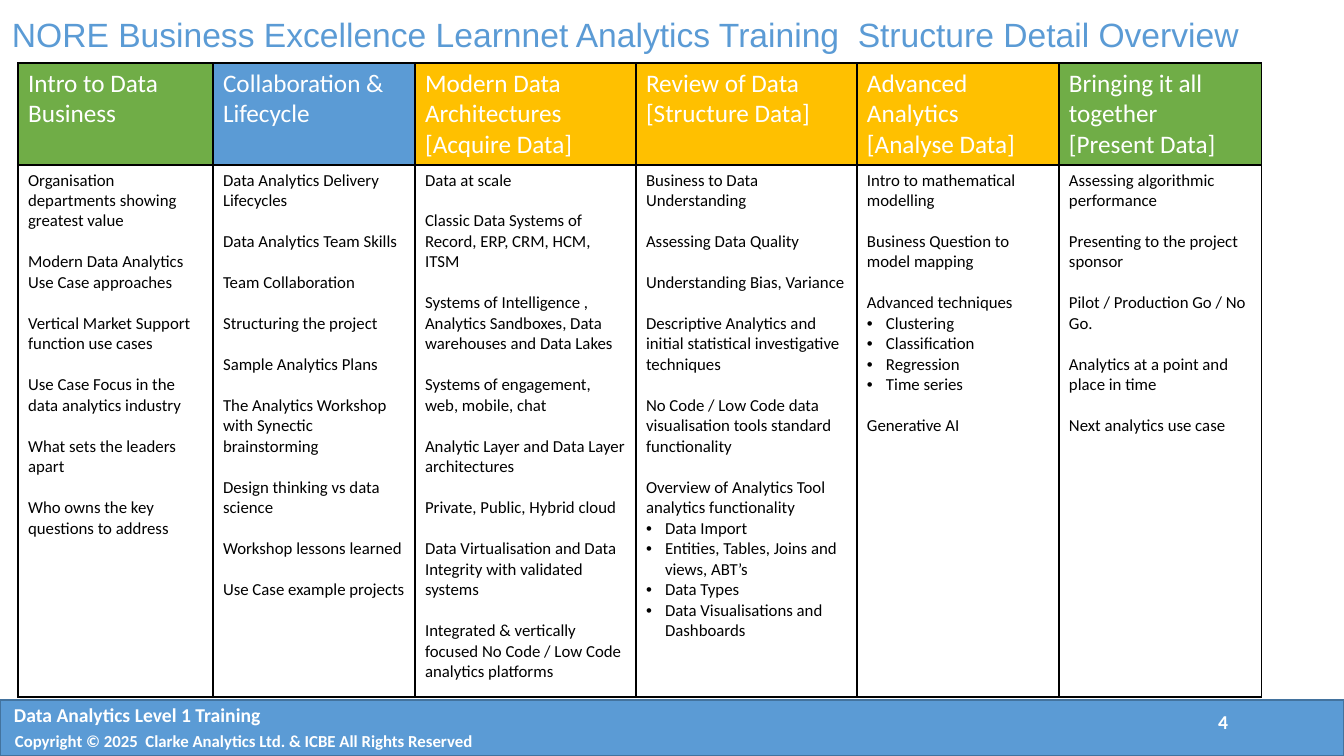
from lxml.etree import SubElement
from pptx import Presentation
from pptx.dml.color import RGBColor as RGB
from pptx.enum.shapes import MSO_SHAPE as SHAPE
from pptx.enum.text import MSO_ANCHOR as ANCHOR, PP_ALIGN as ALIGN
from pptx.oxml.ns import qn
from pptx.util import Pt

PX = 914400 / 100.8
COLORS = {"blue": "5B9BD5", "navy": "43739E", "green": "70AD47",
          "amber": "FFC000", "white": "FFFFFF", "black": "000000"}
LINE = 14.65  # one line of 12 pt body text, in points
BULLET = "• "

# Width, colour, heading and topics of each module
MODULES = [
    (195, "green", ["Intro to Data Business"], [
        "Organisation departments showing greatest value",
        "Modern Data Analytics Use Case approaches",
        "Vertical Market Support function use cases",
        "Use Case Focus in the data analytics industry",
        "What sets the leaders apart",
        "Who owns the key questions to address"]),
    (202, "blue", ["Collaboration & Lifecycle"], [
        "Data Analytics Delivery Lifecycles",
        "Data Analytics Team Skills",
        "Team Collaboration",
        "Structuring the project",
        "Sample Analytics Plans",
        "The Analytics Workshop with Synectic brainstorming",
        "Design thinking vs data science",
        "Workshop lessons learned",
        "Use Case example projects"]),
    (221, "amber", ["Modern Data Architectures", "[Acquire Data]"], [
        "Data at scale",
        "Classic Data Systems of Record, ERP, CRM, HCM, ITSM",
        "Systems of Intelligence , Analytics Sandboxes, Data warehouses and Data Lakes",
        "Systems of engagement, web, mobile, chat",
        "Analytic Layer and Data Layer architectures",
        "Private, Public, Hybrid cloud",
        "Data Virtualisation and Data Integrity with validated systems",
        "Integrated & vertically focused No Code / Low Code analytics platforms"]),
    (221, "amber", ["Review of Data", "[Structure Data]"], [
        "Business to Data Understanding",
        "Assessing Data Quality",
        "Understanding Bias, Variance",
        "Descriptive Analytics and initial statistical investigative techniques",
        "No Code / Low Code data visualisation tools standard functionality",
        "Overview of Analytics Tool analytics functionality",
        "• Data Import",
        "• Entities, Tables, Joins and views, ABT’s",
        "• Data Types",
        "• Data Visualisations and Dashboards"]),
    (202, "amber", ["Advanced Analytics", "[Analyse Data]"], [
        "Intro to mathematical modelling",
        "Business Question to model mapping",
        "Advanced techniques",
        "• Clustering",
        "• Classification",
        "• Regression",
        "• Time series",
        "Generative AI"]),
    (203, "green", ["Bringing it all together", "[Present Data]"], [
        "Assessing algorithmic performance",
        "Presenting to the project sponsor",
        "Pilot / Production Go / No Go.",
        "Analytics at a point and place in time",
        "Next analytics use case"]),
]


def px(n):
    return round(n * PX)


def rgb(name):
    return RGB.from_string(COLORS[name])


def write(tf, lines, size, color, font="Calibri", bold=False, gap=0):
    """Fill a text frame, leaving a gap before each line that is not a bullet."""
    for i, line in enumerate(lines):
        p = tf.paragraphs[0] if i == 0 else tf.add_paragraph()
        if line.startswith(BULLET):
            pPr = p._p.get_or_add_pPr()
            pPr.set("marL", str(px(19)))
            pPr.set("indent", str(px(-19)))
            SubElement(pPr, qn("a:buFont"), typeface="Arial")
            SubElement(pPr, qn("a:buChar"), char=BULLET.strip())
        elif i and gap:
            p.space_before = Pt(gap)
        r = p.add_run()
        r.text = line.removeprefix(BULLET)
        for key, value in {"size": Pt(size), "name": font, "bold": bold}.items():
            setattr(r.font, key, value)
        r.font.color.rgb = rgb(color)


def add_text(s, box, text, size, color, align=ALIGN.LEFT, **style):
    tf = s.shapes.add_textbox(*map(px, box)).text_frame
    tf.word_wrap = True
    write(tf, [text], size, color, **style)
    tf.paragraphs[0].alignment = align
    return tf


def add_title(s, box):
    tf = add_text(s, box, "NORE Business Excellence Learnnet Analytics Training"
                  "  Structure Detail Overview", 24, "blue", font="Arial")
    tf.vertical_anchor = ANCHOR.MIDDLE
    for side in ("left", "right", "top", "bottom"):
        setattr(tf, f"margin_{side}", 0)
    tf.paragraphs[0].line_spacing = 0.9


def style_cell(cell, fill):
    """Draw the four borders, then the fill."""
    tcPr = cell._tc.get_or_add_tcPr()
    for side in "LRTB":
        ln = SubElement(tcPr, qn(f"a:ln{side}"), w=str(Pt(1)))
        SubElement(SubElement(ln, qn("a:solidFill")), qn("a:srgbClr"),
                   val=COLORS["black"])
    cell.fill.solid()
    cell.fill.fore_color.rgb = rgb(fill)


def add_modules(s, box, header_h):
    table = s.shapes.add_table(2, len(MODULES), *map(px, box)).table
    table.first_row = table.horz_banding = False
    table.rows[0].height = px(header_h)
    table.rows[1].height = px(box[3] - header_h)
    for col, (width, color, heading, topics) in enumerate(MODULES):
        table.columns[col].width = px(width)
        head, body = table.cell(0, col), table.cell(1, col)
        style_cell(head, color)
        style_cell(body, "white")
        write(head.text_frame, heading, 18, "white")
        write(body.text_frame, topics, 12, "black", gap=LINE)


def add_footer(s, box):
    x, y, w, h = box
    bar = s.shapes.add_shape(SHAPE.RECTANGLE, *map(px, box))
    bar.shadow.inherit = False
    bar.fill.solid()
    bar.fill.fore_color.rgb = rgb("blue")
    bar.line.color.rgb = rgb("navy")
    bar.line.width = Pt(1)
    add_text(s, (x + w - 136, y + 5, 30, 34), "4", 14, "white", ALIGN.CENTER, bold=True)
    add_text(s, (x + 4, y - 2, 300, 34), "Data Analytics Level 1 Training",
             14, "white", bold=True)
    add_text(s, (x + 5, y + 26, 585, 30),
             "Copyright © 2025  Clarke Analytics Ltd. & ICBE All Rights Reserved",
             12, "white", bold=True)


def main():
    prs = Presentation()
    prs.slide_width, prs.slide_height = px(1344), px(756)
    s = prs.slides.add_slide(prs.slide_layouts[6])
    add_title(s, (12, 2, 1272, 70))
    add_modules(s, (18, 63, sum(m[0] for m in MODULES), 634), 102)
    add_footer(s, (0, 700, 1344, 56))
    prs.save("out.pptx")


if __name__ == "__main__":
    main()
